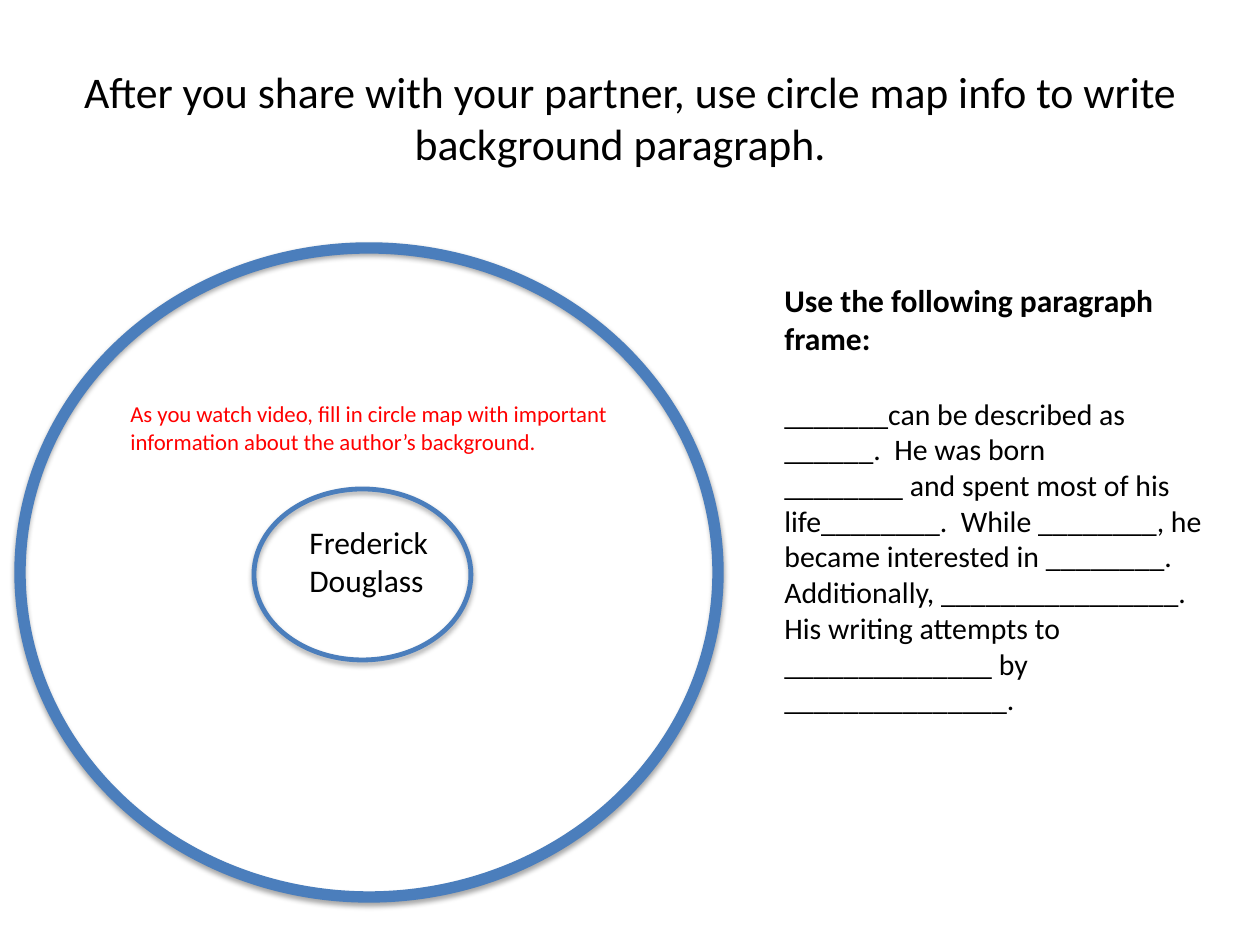
from dataclasses import dataclass
from lxml.etree import SubElement
from pptx import Presentation
from pptx.dml.color import RGBColor
from pptx.enum.shapes import MSO_SHAPE
from pptx.enum.text import MSO_ANCHOR, PP_ALIGN
from pptx.oxml.ns import qn
from pptx.util import Emu, Pt

SCALE = 914400 / 126


@dataclass(frozen=True)
class Theme:
    """Colours, font and type sizes of the slide."""
    font: str = "Calibri"
    ink: str = "000000"
    red: str = "FF0000"
    blue: str = "4B7EBC"
    title: int = 25
    head: int = 18
    body: int = 17
    note: int = 13


THEME = Theme()


def px(*nums):
    """Turn px lengths into EMU."""
    return [Emu(round(num * SCALE)) for num in nums]


def write(slide, box, lines, size, color=THEME.ink, align=PP_ALIGN.LEFT, anchor=MSO_ANCHOR.TOP):
    """Add a wrapped text box with one paragraph per line."""
    frame = slide.shapes.add_textbox(*px(*box)).text_frame
    frame.word_wrap = True
    frame.vertical_anchor = anchor
    frame.text = "\n".join(lines)
    for para in frame.paragraphs:
        para.alignment = align
        para.font.name = THEME.font
        para.font.size = Pt(size)
        para.font.color.rgb = RGBColor.from_string(color)
    return frame


def ring(slide, box, width):
    """Add an unfilled ellipse with a soft shadow below it."""
    shape = slide.shapes.add_shape(MSO_SHAPE.OVAL, *px(*box))
    shape.fill.background()
    shape.line.color.rgb = RGBColor.from_string(THEME.blue)
    shape.line.width = Pt(width)
    shape.shadow.inherit = False
    effects = shape._element.spPr.find(qn("a:effectLst"))
    shadow = SubElement(effects, qn("a:outerShdw"), blurRad=str(Pt(3.1)), dist=str(Pt(1.8)),
                        dir="5400000", rotWithShape="0")
    tint = SubElement(shadow, qn("a:srgbClr"), val=THEME.ink)
    SubElement(tint, qn("a:alpha"), val="35000")


def title(slide, box):
    """Write the centred instruction at the top."""
    text = "After you share with your partner, use circle map info to write background paragraph.  "
    write(slide, box, [text], THEME.title, align=PP_ALIGN.CENTER, anchor=MSO_ANCHOR.MIDDLE)


def circle_map(slide, box):
    """Draw the two rings with the note and the author's name."""
    left, top, width, height = box
    ring(slide, box, 6.5)
    ring(slide, (left + 234, top + 241, 217, 171), 2.75)
    note = "As you watch video, fill in circle map with important information about the author’s background."
    write(slide, (left + 98, top + 146, 564, 68), [note], THEME.note, THEME.red)
    write(slide, (left + 277, top + 269, 174, 89), ["Frederick Douglass"], THEME.head)


def writing_frame(slide, box):
    """Write the heading and the sentences with blanks to fill in."""
    lines = [
        "Use the following paragraph frame:",
        "_______can be described as ______.  He was born",
        "________ and spent most of his life________.  While ________, he became interested in ________.",
        "Additionally, ________________.  His writing attempts to ______________ by _______________.",
    ]
    head = write(slide, box, lines, THEME.body).paragraphs[0]
    head.font.size = Pt(THEME.head)
    head.font.bold = True
    head.space_after = Pt(22)


def main():
    """Build the slide and save it."""
    deck = Presentation()
    deck.slide_width, deck.slide_height = px(1260, 945)
    slide = deck.slides.add_slide(deck.slide_layouts[6])
    title(slide, (63, 38, 1134, 158))
    circle_map(slide, (20, 248, 698, 649))
    writing_frame(slide, (772, 275, 455, 488))
    deck.save("out.pptx")


if __name__ == "__main__":
    main()
